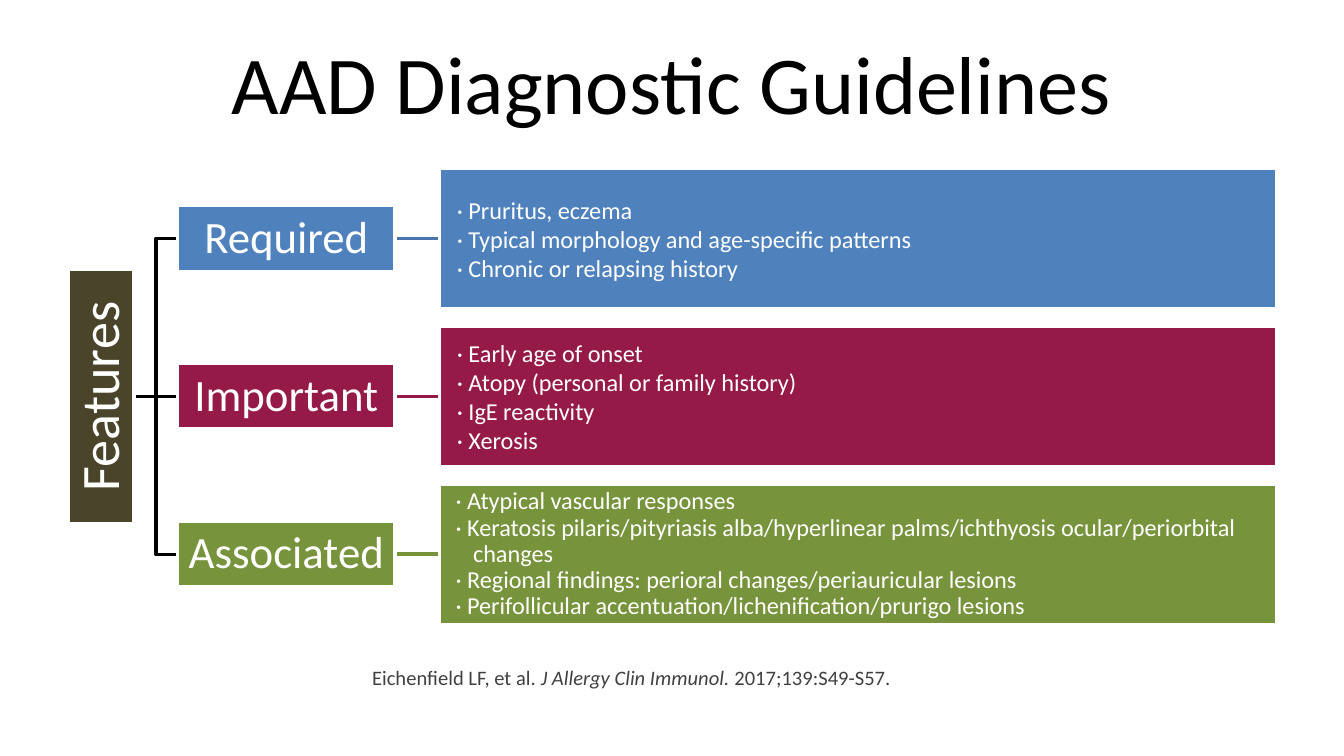
from dataclasses import dataclass

from lxml import etree
from pptx import Presentation
from pptx.dml.color import RGBColor
from pptx.enum.shapes import MSO_CONNECTOR, MSO_SHAPE
from pptx.enum.text import MSO_ANCHOR, PP_ALIGN
from pptx.oxml.ns import qn
from pptx.util import Inches, Pt

RECTANGLE = MSO_SHAPE.RECTANGLE
STRAIGHT, ELBOW = MSO_CONNECTOR.STRAIGHT, MSO_CONNECTOR.ELBOW
TOP, MIDDLE = MSO_ANCHOR.TOP, MSO_ANCHOR.MIDDLE
LEFT, CENTER = PP_ALIGN.LEFT, PP_ALIGN.CENTER
LEFT_SIDE, RIGHT_SIDE = 1, 3


@dataclass(frozen=True)
class Theme:
    font: str = "Calibri"
    black: str = "000000"
    white: str = "FFFFFF"
    gray: str = "404040"
    brown: str = "4A452A"
    blue: str = "4F81BD"
    blue_line: str = "4875AC"
    red: str = "951A48"
    green: str = "77933C"
    title_size: int = 44
    root_size: int = 29
    label_size: int = 24
    detail_size: int = 13
    citation_size: int = 11
    line_width: int = 2


THEME = Theme()
CELL = 0.1  # side of a grid cell in inches
COLUMNS, ROWS = 100, 56.25

# Geometry of the tree, in grid columns and rows
CENTER_ROW, BAND_PITCH = 29.5, 11.75
ROOT_COLUMN, LABEL_COLUMN, DETAIL_COLUMN = 5.1, 13.2, 32.7
LABEL_WIDTH, DETAIL_WIDTH, ROOT_HEIGHT = 16.2, 62.3, 18.9
LABEL_HEIGHT, DETAIL_HEIGHT = 4.9, 10.5

# Label, fill, line, line spacing, left indent, first-line indent, details
BANDS = [
    ("Required", THEME.blue, THEME.blue_line, 1.0, 0.13, 0,
     ["Pruritus, eczema",
      "Typical morphology and age-specific patterns",
      "Chronic or relapsing history"]),
    ("Important", THEME.red, THEME.red, 1.0, 0.13, 0,
     ["Early age of onset",
      "Atopy (personal or family history)",
      "IgE reactivity",
      "Xerosis"]),
    ("Associated", THEME.green, THEME.green, 0.9, 0.25, -0.13,
     ["Atypical vascular responses",
      "Keratosis pilaris/pityriasis alba/hyperlinear palms/"
      "ichthyosis ocular/periorbital changes",
      "Regional findings: perioral changes/periauricular lesions",
      "Perifollicular accentuation/lichenification/prurigo lesions"]),
]


def cells(count):
    return Inches(count * CELL)


class SlideBuilder:
    def __init__(self, presentation, theme):
        self.theme = theme
        self.slide = presentation.slides.add_slide(presentation.slide_layouts[6])

    def style_run(self, run, size, color):
        run.font.name = self.theme.font
        run.font.size = Pt(size)
        run.font.color.rgb = RGBColor.from_string(color)

    def set_text(self, shape, text, size, color, align, anchor, margin, spacing=1.0):
        """Fill a shape with evenly styled paragraphs, one per line of text."""
        frame = shape.text_frame
        frame.word_wrap = True
        frame.vertical_anchor = anchor
        frame.margin_left = frame.margin_right = Inches(margin)
        frame.margin_top = frame.margin_bottom = Inches(min(margin, 0.05))
        frame.text = text
        for paragraph in frame.paragraphs:
            paragraph.alignment = align
            paragraph.line_spacing = spacing
            for run in paragraph.runs:
                self.style_run(run, size, color)

    def text(self, column, row, width, height, text, size, color, align, anchor,
             spacing=1.0):
        shape = self.slide.shapes.add_textbox(
            cells(column), cells(row), cells(width), cells(height))
        self.set_text(shape, text, size, color, align, anchor, 0.1, spacing)
        return shape

    def box(self, column, middle_row, width, height, fill):
        shape = self.slide.shapes.add_shape(
            RECTANGLE, cells(column), cells(middle_row - height / 2),
            cells(width), cells(height))
        shape.shadow.inherit = False
        shape.fill.solid()
        shape.fill.fore_color.rgb = RGBColor.from_string(fill)
        shape.line.color.rgb = RGBColor.from_string(self.theme.white)
        shape.line.width = Pt(self.theme.line_width)
        return shape

    def label(self, column, middle_row, width, height, fill, text, size):
        shape = self.box(column, middle_row, width, height, fill)
        self.set_text(shape, text, size, self.theme.white, CENTER, MIDDLE, 0.02, 0.9)
        return shape

    def details(self, column, middle_row, width, height, fill, items, spacing,
                indent, first_indent):
        shape = self.box(column, middle_row, width, height, fill)
        self.set_text(shape, "\n".join(f"· {item}" for item in items),
                      self.theme.detail_size, self.theme.white, LEFT, MIDDLE, 0,
                      spacing)
        for paragraph in shape.text_frame.paragraphs:
            properties = paragraph._p.get_or_add_pPr()
            properties.set("marL", str(Inches(indent)))
            properties.set("indent", str(Inches(first_indent)))
        return shape

    def join(self, kind, start, end, color):
        """Link the right side of one box to the left side of another."""
        connector = self.slide.shapes.add_connector(kind, 0, 0, 0, 0)
        connector.begin_connect(start, RIGHT_SIDE)
        connector.end_connect(end, LEFT_SIDE)
        connector.line.color.rgb = RGBColor.from_string(color)
        connector.line.width = Pt(self.theme.line_width)
        etree.SubElement(connector._element.spPr, qn("a:effectLst"))
        # Behind the boxes, whose white outlines trim the line ends
        self.slide.shapes._spTree.insert(2, connector._element)


def main():
    presentation = Presentation()
    presentation.slide_width = cells(COLUMNS)
    presentation.slide_height = cells(ROWS)
    builder = SlideBuilder(presentation, THEME)

    # Title
    builder.text(5, 1.4, 90, 9.4, "AAD Diagnostic Guidelines", THEME.title_size,
                 THEME.black, CENTER, MIDDLE)

    # Root of the tree, with text reading upwards
    root = builder.label(ROOT_COLUMN, CENTER_ROW, LABEL_HEIGHT, ROOT_HEIGHT,
                         THEME.brown, "Features", THEME.root_size)
    root.text_frame._txBody.bodyPr.set("vert", "vert270")

    # One band per group of features
    for index, (name, fill, line, spacing, indent, first, items) in enumerate(BANDS):
        row = CENTER_ROW + (index - 1) * BAND_PITCH
        label = builder.label(LABEL_COLUMN, row, LABEL_WIDTH, LABEL_HEIGHT,
                              fill, name, THEME.label_size)
        details = builder.details(DETAIL_COLUMN, row, DETAIL_WIDTH, DETAIL_HEIGHT,
                                  fill, items, spacing, indent, first)
        builder.join(STRAIGHT if row == CENTER_ROW else ELBOW, root, label, THEME.black)
        builder.join(STRAIGHT, label, details, line)

    # Citation, with the journal in italics
    citation = builder.text(26.7, 49.2, 68.3, 6.5, "Eichenfield LF, et al. ",
                            THEME.citation_size, THEME.gray, LEFT, TOP, 0.9)
    paragraph = citation.text_frame.paragraphs[0]
    for text, italic in [("J Allergy Clin Immunol.", True),
                         (" 2017;139:S49-S57.", False)]:
        run = paragraph.add_run()
        run.text = text
        run.font.italic = italic
        builder.style_run(run, THEME.citation_size, THEME.gray)

    presentation.save("out.pptx")


if __name__ == "__main__":
    main()
